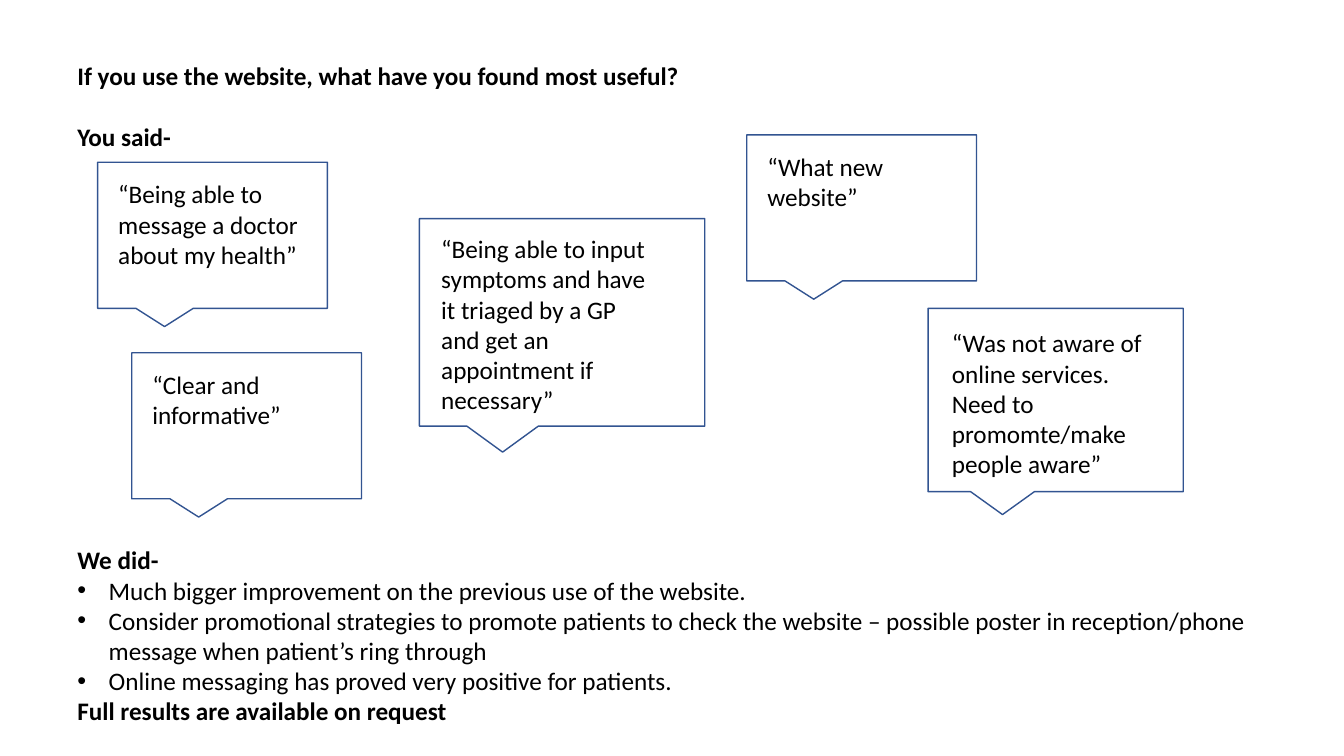
from lxml import etree
from pptx import Presentation
from pptx.dml.color import RGBColor
from pptx.enum.shapes import MSO_SHAPE
from pptx.enum.text import MSO_ANCHOR, PP_ALIGN
from pptx.oxml.ns import qn
from pptx.util import Cm, Pt

CALLOUT = MSO_SHAPE.RECTANGULAR_CALLOUT
TOP = MSO_ANCHOR.TOP
LEFT = PP_ALIGN.LEFT
COLORS = {"text": "000000", "outline": "325491", "background": "FFFFFF"}
FONT = "Calibri"
TEXT_SIZE = 18
BULLET_INDENT = 0.79

SUMMARY_BOX = (1.7, 1.4, 30.48, 17.2)
SUMMARY = [
    ("If you use the website, what have you found most useful?", "heading", 0),
    ("You said-", "heading", 21.6),
    ("We did-", "heading", 281),
    ("Much bigger improvement on the previous use of the website.", "bullet", 0),
    ("Consider promotional strategies to promote patients to check the website – "
     "possible poster in reception/phone message when patient’s ring through", "bullet", 0),
    ("Online messaging has proved very positive for patients.", "bullet", 0),
    ("Full results are available on request", "heading", 0),
]

SMALL = (5.79, 3.68)
SMALL_TEXT = (0.27, 0.29, 5.21, 2.16)
QUOTES = [
    ("“Being able to message a doctor about my health”", (2.46, 4.09, *SMALL), SMALL_TEXT),
    ("“Being able to input symptoms and have it triaged by a GP and get an "
     "appointment if necessary”", (10.57, 5.51, 7.19, 5.23), (0.3, 0.25, 5.94, 4.95)),
    ("“Clear and informative”", (3.32, 8.89, *SMALL), SMALL_TEXT),
    ("“What new website”", (18.82, 3.4, *SMALL), SMALL_TEXT),
    ("“Was not aware of online services. Need to promomte/make people aware”",
     (23.39, 7.77, 6.43, 4.62), (0.35, 0.36, 5.69, 5.16)),
]


def color(name):
    return RGBColor.from_string(COLORS[name])


def add_text_frame(shapes, box):
    text_frame = shapes.add_textbox(*map(Cm, box)).text_frame
    text_frame.word_wrap = True
    text_frame.vertical_anchor = TOP
    return text_frame


def write(paragraph, text, bold=False):
    paragraph.text = text
    paragraph.alignment = LEFT
    for run in paragraph.runs:
        run.font.name = FONT
        run.font.size = Pt(TEXT_SIZE)
        run.font.bold = bold
        run.font.color.rgb = color("text")


def add_bullet(paragraph):
    properties = paragraph._p.get_or_add_pPr()
    properties.set("marL", str(Cm(BULLET_INDENT)))
    properties.set("indent", str(-Cm(BULLET_INDENT)))
    etree.SubElement(properties, qn("a:buFont")).set("typeface", "Arial")
    etree.SubElement(properties, qn("a:buChar")).set("char", "•")


def add_summary(slide, box):
    text_frame = add_text_frame(slide.shapes, box)
    for index, (text, kind, space_before) in enumerate(SUMMARY):
        paragraph = text_frame.add_paragraph() if index else text_frame.paragraphs[0]
        if kind == "bullet":
            add_bullet(paragraph)
        write(paragraph, text, bold=kind == "heading")
        if space_before:
            paragraph.space_before = Pt(space_before)


def add_quote(slide, text, box, text_area):
    group = slide.shapes.add_group_shape()
    callout = group.shapes.add_shape(CALLOUT, *map(Cm, box))
    callout.shadow.inherit = False
    callout.fill.background()
    callout.line.color.rgb = color("outline")
    callout.line.width = Pt(1)
    left, top, width, height = text_area
    text_box = (box[0] + left, box[1] + top, width, height)
    write(add_text_frame(group.shapes, text_box).paragraphs[0], text)


def main():
    presentation = Presentation()
    presentation.slide_width = Cm(33.87)
    presentation.slide_height = Cm(19.05)
    slide = presentation.slides.add_slide(presentation.slide_layouts[6])
    slide.background.fill.solid()
    slide.background.fill.fore_color.rgb = color("background")
    add_summary(slide, SUMMARY_BOX)
    for text, box, text_area in QUOTES:
        add_quote(slide, text, box, text_area)
    presentation.save("out.pptx")


if __name__ == "__main__":
    main()
